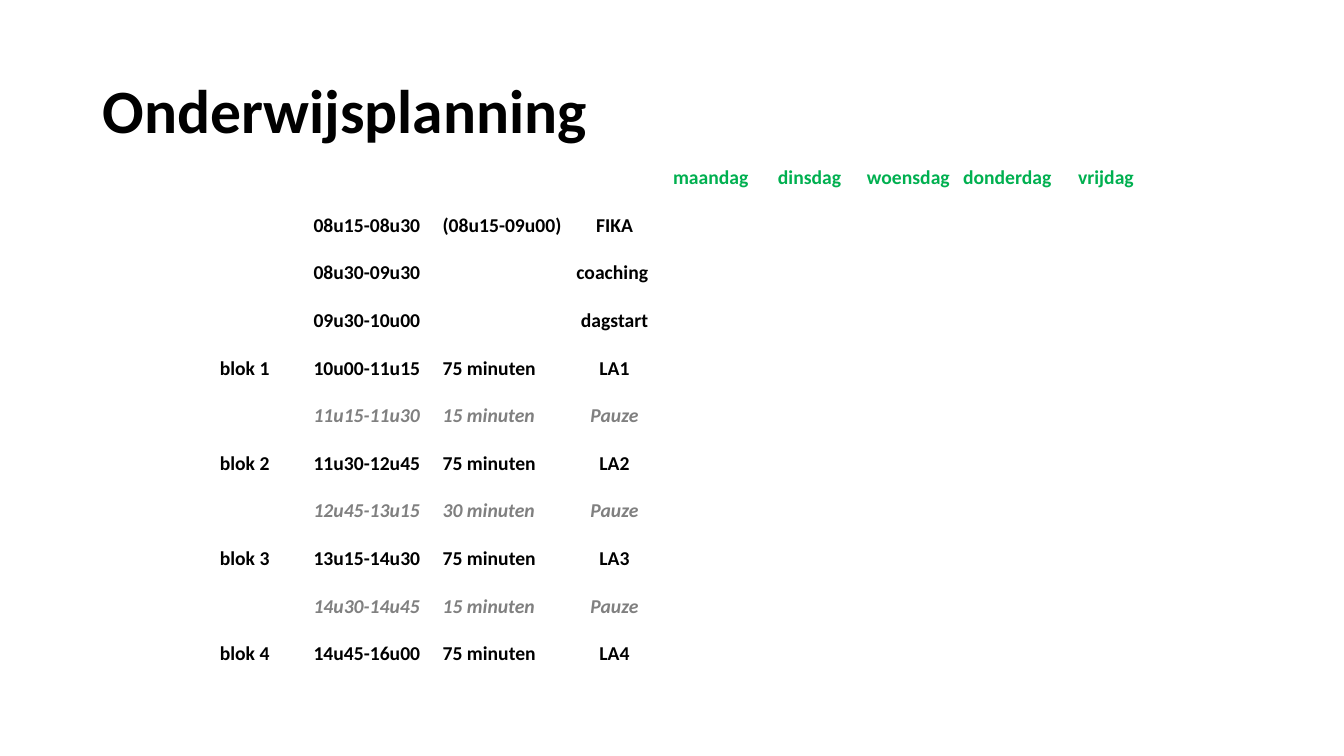
from pptx import Presentation
from pptx.dml.color import RGBColor
from pptx.enum.text import MSO_ANCHOR as Anchor, PP_ALIGN as Align
from pptx.util import Inches, Pt

TITLE = "Onderwijsplanning"
DAYS = ["maandag", "dinsdag", "woensdag", "donderdag", "vrijdag"]
BREAK = "Pauze"
# block, time, duration, activity
SCHEDULE = [
    ("", "08u15-08u30", "(08u15-09u00)", "FIKA"),
    ("", "08u30-09u30", "", "coaching "),
    ("", "09u30-10u00", "", "dagstart"),
    ("blok 1", "10u00-11u15", "75 minuten", "LA1"),
    ("", "11u15-11u30", "15 minuten", BREAK),
    ("blok 2", "11u30-12u45", "75 minuten", "LA2"),
    ("", "12u45-13u15", "30 minuten", BREAK),
    ("blok 3", "13u15-14u30", "75 minuten", "LA3"),
    ("", "14u30-14u45", "15 minuten", BREAK),
    ("blok 4", "14u45-16u00", "75 minuten", "LA4"),
]
LABEL_WIDTHS = [0.93, 1.28, 1.25, 0.93]
DAY_WIDTH = 0.98
ACTIVITY_COLUMN = 3  # this column and the days after it are centred
TABLE_LEFT, TABLE_TOP, TABLE_HEIGHT = 2.17, 1.46, 5.2

THEME = {
    "font": "Calibri",
    "title_size": Pt(44),
    "table_size": Pt(14),
    "text": RGBColor(0x00, 0x00, 0x00),
    "day": RGBColor(0x00, 0xB0, 0x50),
    "break": RGBColor(0x80, 0x80, 0x80),
}


def style_font(paragraph, size, color, italic=False):
    font = paragraph.font
    font.name = THEME["font"]
    font.size = size
    font.bold = True
    font.italic = italic
    font.color.rgb = color


def add_title(slide):
    box = slide.shapes.add_textbox(Inches(0.92), Inches(0.4), Inches(11.5), Inches(1.45))
    frame = box.text_frame
    frame.word_wrap = True
    frame.vertical_anchor = Anchor.MIDDLE
    paragraph = frame.paragraphs[0]
    paragraph.text = TITLE
    paragraph.line_spacing = 0.9
    style_font(paragraph, THEME["title_size"], THEME["text"])


def fill_cell(cell, text, color, italic, centred):
    cell.fill.background()
    cell.vertical_anchor = Anchor.BOTTOM
    cell.margin_left = cell.margin_right = cell.margin_top = Inches(0.01)
    cell.margin_bottom = Inches(0.05)
    paragraph = cell.text_frame.paragraphs[0]
    paragraph.text = text
    paragraph.alignment = Align.CENTER if centred else Align.LEFT
    style_font(paragraph, THEME["table_size"], color, italic)


def add_schedule(slide):
    widths = LABEL_WIDTHS + [DAY_WIDTH] * len(DAYS)
    rows = [("",) * len(LABEL_WIDTHS) + tuple(DAYS)]
    rows += [entry + ("",) * len(DAYS) for entry in SCHEDULE]
    table = slide.shapes.add_table(
        len(rows), len(widths), Inches(TABLE_LEFT), Inches(TABLE_TOP),
        Inches(sum(widths)), Inches(TABLE_HEIGHT)).table
    table.first_row = table.horz_banding = False
    for column, width in zip(table.columns, widths):
        column.width = Inches(width)
    for row_index, row in enumerate(rows):
        is_break = BREAK in row
        kind = "day" if row_index == 0 else "break" if is_break else "text"
        for column_index, text in enumerate(row):
            fill_cell(table.cell(row_index, column_index), text, THEME[kind],
                      is_break, column_index >= ACTIVITY_COLUMN)


def main():
    presentation = Presentation()
    presentation.slide_width = Inches(13.33)
    presentation.slide_height = Inches(7.5)
    slide = presentation.slides.add_slide(presentation.slide_layouts[6])
    add_title(slide)
    add_schedule(slide)
    presentation.save("out.pptx")


if __name__ == "__main__":
    main()
